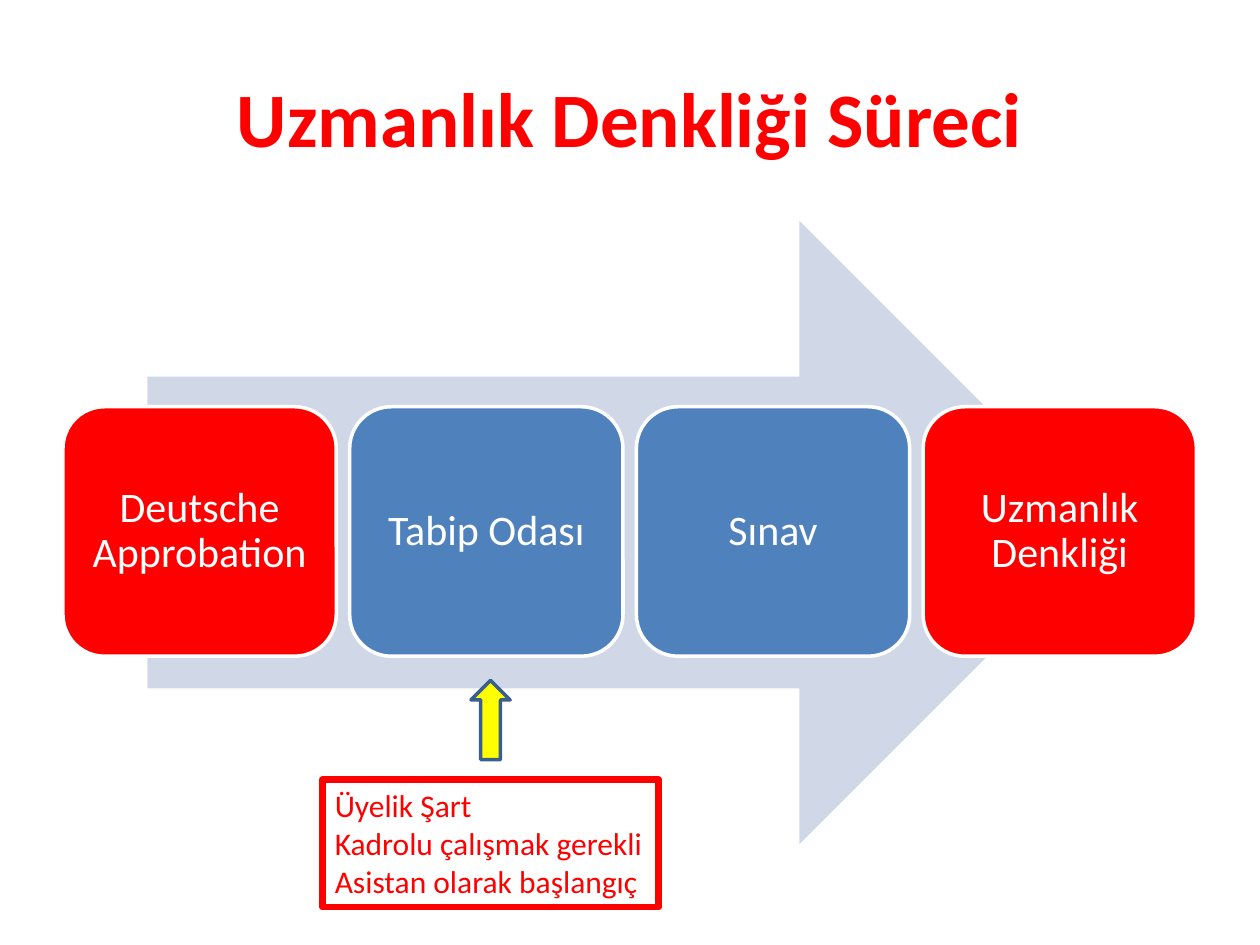
from dataclasses import dataclass

from pptx import Presentation
from pptx.dml.color import RGBColor
from pptx.enum import shapes, text
from pptx.util import Cm, Pt


@dataclass(frozen=True)
class Theme:
    font: str = "Calibri"
    red: str = "FF0000"
    blue: str = "4F81BD"
    pale: str = "D0D8E8"
    yellow: str = "FFFF00"
    outline: str = "3A5F8C"
    white: str = "FFFFFF"
    title_size: float = 44
    step_size: float = 24
    note_size: float = 18


THEME = Theme()
SHAPE = shapes.MSO_SHAPE
ALIGN = text.PP_ALIGN

STEPS = [
    ("Deutsche Approbation", THEME.red),
    ("Tabip Odası", THEME.blue),
    ("Sınav", THEME.blue),
    ("Uzmanlık Denkliği", THEME.red),
]
STEP_LEFT, STEP_TOP = 1.27, 8.2
STEP_WIDTH, STEP_HEIGHT = 5.51, 5.03
STEP_PITCH = 5.78
NOTES = ["Üyelik Şart", "Kadrolu çalışmak gerekli", "Asistan olarak başlangıç"]


def write(tf, lines, size, color, align, bold=False):
    tf.text = "\n".join(lines)
    for p in tf.paragraphs:
        p.alignment = align
        for r in p.runs:
            r.font.name = THEME.font
            r.font.size = Pt(size)
            r.font.bold = bold
            r.font.color.rgb = RGBColor.from_string(color)


def add_box(s, kind, box, fill=None, line=None, line_width=2):
    """Add a preset shape; box is left, top, width, height in centimetres."""
    sp = s.shapes.add_shape(kind, *(Cm(v) for v in box))
    sp.shadow.inherit = False
    if fill:
        sp.fill.solid()
        sp.fill.fore_color.rgb = RGBColor.from_string(fill)
    else:
        sp.fill.background()
    if line:
        sp.line.color.rgb = RGBColor.from_string(line)
        sp.line.width = Pt(line_width)
    else:
        sp.line.fill.background()
    return sp


def set_title(s, title):
    sp = s.shapes.title
    sp.left, sp.top, sp.width, sp.height = Cm(1.27), Cm(0.76), Cm(22.86), Cm(3.18)
    sp.text_frame.vertical_anchor = text.MSO_ANCHOR.MIDDLE
    write(sp.text_frame, [title], THEME.title_size, THEME.red, ALIGN.CENTER, bold=True)


def add_step(s, index, label, fill):
    left = STEP_LEFT + index * STEP_PITCH
    sp = add_box(s, SHAPE.ROUNDED_RECTANGLE,
                 (left, STEP_TOP, STEP_WIDTH, STEP_HEIGHT), fill, THEME.white)
    tf = sp.text_frame
    tf.word_wrap = True
    tf.vertical_anchor = text.MSO_ANCHOR.MIDDLE
    # The rounded corners already inset the text by about 0.25 cm.
    tf.margin_left = tf.margin_right = tf.margin_top = tf.margin_bottom = Cm(0.25)
    write(tf, [label], THEME.step_size, THEME.white, ALIGN.CENTER)
    tf.paragraphs[0].line_spacing = 0.9


def add_note(s, lines):
    sp = add_box(s, SHAPE.RECTANGLE, (6.5, 15.72, 6.78, 2.57),
                 line=THEME.red, line_width=3.75)
    tf = sp.text_frame
    tf.word_wrap = False
    tf.auto_size = text.MSO_AUTO_SIZE.SHAPE_TO_FIT_TEXT
    tf.vertical_anchor = text.MSO_ANCHOR.TOP
    write(tf, lines, THEME.note_size, THEME.red, ALIGN.LEFT)


def main():
    prs = Presentation()
    prs.slide_width, prs.slide_height = Cm(25.4), Cm(19.05)
    s = prs.slides.add_slide(prs.slide_layouts[5])
    set_title(s, "Uzmanlık Denkliği Süreci")
    add_box(s, SHAPE.RIGHT_ARROW, (2.97, 4.45, 19.43, 12.57), THEME.pale)
    for i, (label, fill) in enumerate(STEPS):
        add_step(s, i, label, fill)
    pointer = add_box(s, SHAPE.RIGHT_ARROW, (9.09, 14.12, 1.6, 0.79),
                      THEME.yellow, THEME.outline)
    pointer.rotation = 270
    add_note(s, NOTES)
    prs.save("out.pptx")


if __name__ == "__main__":
    main()
